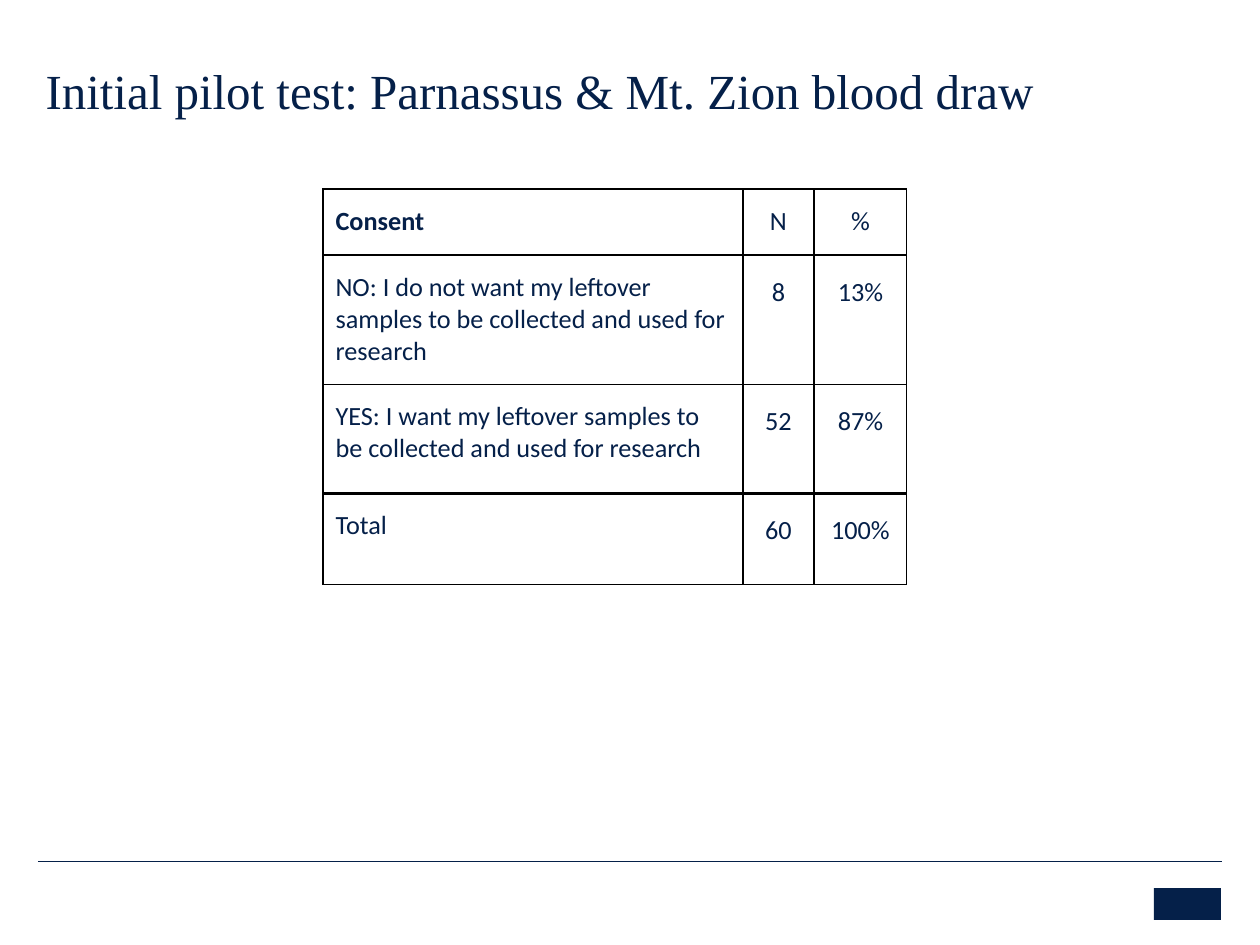
from lxml import etree
from pptx import Presentation
from pptx import util as u
from pptx.dml.color import RGBColor
from pptx.enum import shapes, text
from pptx.oxml import ns

NAVY = RGBColor(0x05, 0x20, 0x49)
BLACK = RGBColor(0, 0, 0)
SCALE = 914400 / 126


def px(*lengths):
    return [u.Emu(round(length * SCALE)) for length in lengths]


def write(frame, words, font="Calibri", size=15, bold=False,
          align=text.PP_ALIGN.LEFT, spacing=1.0):
    frame.word_wrap = True
    paragraph = frame.paragraphs[0]
    paragraph.alignment = align
    paragraph.line_spacing = spacing
    paragraph.space_before = u.Pt(0)
    run = paragraph.add_run()
    run.text = words
    run.font.name = font
    run.font.size = u.Pt(size)
    run.font.bold = bold
    run.font.color.rgb = NAVY


deck = Presentation()
deck.slide_width, deck.slide_height = px(1260, 945)
slide = deck.slides.add_slide(deck.slide_layouts[5])

for left, right in ((50, 1210), (38, 1222)):
    footer_rule = slide.shapes.add_connector(
        shapes.MSO_CONNECTOR.STRAIGHT, *px(left, 861, right, 861))
    footer_rule.line.color.rgb = NAVY
    footer_rule.line.width = u.Pt(0.25)
    etree.SubElement(footer_rule._element.spPr, ns.qn("a:effectLst"))

badge = slide.shapes.add_shape(shapes.MSO_SHAPE.RECTANGLE, *px(1154, 888, 67, 32))
badge.shadow.inherit = False
badge.fill.solid()
badge.fill.fore_color.rgb = NAVY
badge.line.fill.background()

heading = slide.shapes.title
heading.left, heading.top, heading.width, heading.height = px(33, 57, 1174, 116)
heading_frame = heading.text_frame
heading_frame.auto_size = text.MSO_AUTO_SIZE.NONE
heading_frame.vertical_anchor = text.MSO_ANCHOR.TOP
heading_frame.margin_left = heading_frame.margin_right = u.Inches(0.1)
heading_frame.margin_top = heading_frame.margin_bottom = u.Inches(0.1)
write(heading_frame, "Initial pilot test: Parnassus & Mt. Zion blood draw",
      font="Times New Roman", size=28, spacing=0.85)

answers = [
    ("Consent", "N", "%"),
    ("NO: I do not want my leftover samples to be collected and used for research",
     "8", "13%"),
    ("YES: I want my leftover samples to be collected and used for research",
     "52", "87%"),
    ("Total", "60", "100%"),
]
column_widths = px(420, 71, 93)
row_heights = px(66, 121, 109, 91)
total_row = len(answers) - 1

consent = slide.shapes.add_table(
    len(answers), len(column_widths), *px(323, 189),
    sum(column_widths), sum(row_heights)).table
consent.first_row = consent.horz_banding = False
for column, width in zip(consent.columns, column_widths):
    column.width = width
for row, height in zip(consent.rows, row_heights):
    row.height = height

for r, answer in enumerate(answers):
    for c, words in enumerate(answer):
        cell = consent.cell(r, c)
        cell.margin_left = cell.margin_right = u.Inches(0.1)
        cell.margin_top = cell.margin_bottom = u.Inches(0.13)
        cell.vertical_anchor = text.MSO_ANCHOR.TOP
        write(cell.text_frame, words, bold=r == c == 0,
              align=text.PP_ALIGN.CENTER if c else text.PP_ALIGN.LEFT,
              spacing=1.15 if r and c else 1.0)
        properties = cell._tc.get_or_add_tcPr()
        for side in "LRTB":
            thick = (r, side) in ((total_row - 1, "B"), (total_row, "T"))
            border = etree.SubElement(properties, ns.qn(f"a:ln{side}"),
                                      w=str(u.Pt(2 if thick else 0.75)))
            paint = etree.SubElement(border, ns.qn("a:solidFill"))
            etree.SubElement(paint, ns.qn("a:srgbClr"), val=str(BLACK))
        cell.fill.background()

deck.save("out.pptx")
